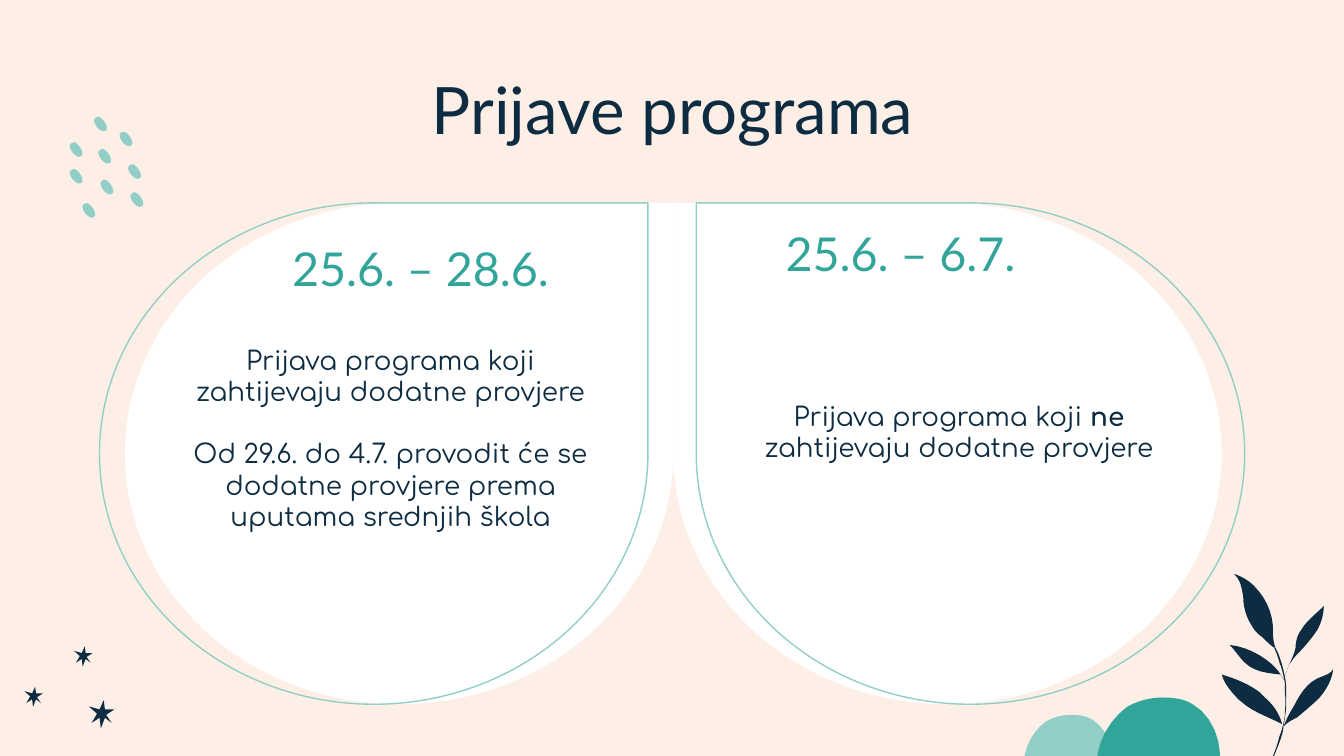
from pptx import Presentation
from pptx.dml.color import RGBColor
from pptx.enum.shapes import MSO_SHAPE
from pptx.enum.text import MSO_ANCHOR, PP_ALIGN
from pptx.util import Pt

COLORS = {"cream": "FDEEE6", "navy": "0D2C42", "teal": "32A59B",
          "mint": "90CEC7", "white": "FFFFFF"}

# Outlines in percent of their box: (x, y) is a line, six numbers are a Bézier curve.
DOT = [(33, 0), (12, 2, 0, 12, 0, 30), (8, 60, 33, 88, 60, 98),
       (80, 105, 100, 95, 98, 75), (95, 50, 70, 18, 48, 5), (43, 1, 38, 0, 33, 0)]
STAR = [(42, 33), (58, 0), (63, 33), (100, 33), (68, 52), (89, 81),
        (63, 62), (47, 100), (42, 62), (11, 81), (32, 48), (0, 22)]
DOME = [(52, 0), (44, 0, 33, 4, 24, 14), (10, 34, 0, 66, 0, 100), (97, 100),
        (100, 66, 91, 26, 76, 10), (69, 2, 61, 0, 52, 0)]
STEM = [(39, 55), (40, 57, 42, 62, 43, 66), (45, 71, 46, 76, 47, 81), (47, 89),
        (48, 95, 47, 100, 47, 106), (46, 111, 45, 116, 43, 121),
        (41, 129, 38, 137, 34, 144), (31, 149, 28, 154, 24, 159),
        (22, 163, 18, 168, 14, 173), (18, 169, 22, 164, 25, 160),
        (28, 156, 32, 149, 34, 145), (38, 139, 40, 133, 42, 128),
        (44, 123, 46, 117, 46, 113), (47, 108, 48, 102, 48, 97),
        (48, 93, 48, 89, 48, 85), (48, 81, 47, 76, 46, 72),
        (45, 67, 43, 62, 42, 59), (40, 55)]
LEAVES = [
    [(83, 71), (81, 75, 75, 76, 71, 78), (63, 82, 58, 90, 54, 98),
     (51, 103, 48, 108, 46, 114), (48, 111, 52, 109, 56, 107),
     (62, 102, 68, 97, 73, 92), (78, 86, 82, 79, 83, 71)],
    [(32, 92), (28, 88), (20, 82, 10, 78, 0, 75), (2, 82, 7, 88, 13, 94),
     (18, 98), (26, 104, 36, 107, 45, 112), (43, 104, 38, 97, 32, 92)],
    [(24, 9), (20, 5, 15, 2, 9, 0), (10, 1), (14, 5, 15, 11, 16, 17),
     (16, 24, 18, 32, 22, 38), (24, 42, 27, 45, 30, 47),
     (33, 50, 36, 53, 39, 55), (40, 55), (38, 50, 38, 44, 38, 38),
     (37, 27, 32, 17, 24, 9)],
    [(37, 67), (29, 60, 17, 54, 6, 53), (10, 57, 13, 62, 17, 66),
     (24, 73, 34, 74, 44, 75), (46, 79), (44, 74, 41, 71, 37, 67)],
    [(76, 24), (70, 30, 63, 35, 59, 42), (56, 46, 55, 51, 55, 55),
     (54, 59, 53, 62, 50, 68), (46, 79), (50, 68), (52, 65, 54, 62, 57, 59),
     (62, 54, 67, 48, 71, 42), (74, 37, 76, 30, 76, 24)],
]


def rgb(name):
    return RGBColor.from_string(COLORS[name])


def flatten(outline, steps=6):
    """Turn the curves of an outline into short straight pieces."""
    points = [outline[0]]
    for part in outline[1:]:
        if len(part) == 2:
            points.append(part)
            continue
        x0, y0 = points[-1]
        x1, y1, x2, y2, x3, y3 = part
        for i in range(1, steps + 1):
            t = i / steps
            a, b, c, d = (1 - t) ** 3, 3 * t * (1 - t) ** 2, 3 * t * t * (1 - t), t ** 3
            points.append((a * x0 + b * x1 + c * x2 + d * x3,
                           a * y0 + b * y1 + c * y2 + d * y3))
    return points


def add_outline(s, outline, box, color):
    x, y, w, h = box
    points = [(Pt(x + px * w / 100), Pt(y + py * h / 100)) for px, py in flatten(outline)]
    builder = s.shapes.build_freeform(*points[0], scale=1.0)
    builder.add_line_segments(points[1:], close=True)
    sp = builder.convert_to_shape()
    sp.shadow.inherit = False
    sp.fill.solid()
    sp.fill.fore_color.rgb = rgb(color)
    sp.line.fill.background()


def add_text(s, box, paragraphs, font, size, color, left=7.2, right=7.2, bottom=7.2, gap=0):
    """Each paragraph is a list of (text, bold) runs."""
    tf = s.shapes.add_textbox(*map(Pt, box)).text_frame
    tf.word_wrap = True
    tf.vertical_anchor = MSO_ANCHOR.MIDDLE
    tf.margin_left, tf.margin_right = Pt(left), Pt(right)
    tf.margin_top, tf.margin_bottom = Pt(7.2), Pt(bottom)
    for i, runs in enumerate(paragraphs):
        p = tf.paragraphs[0] if i == 0 else tf.add_paragraph()
        p.alignment = PP_ALIGN.CENTER
        p.space_before = Pt(gap if i else 0)
        for text, bold in runs:
            r = p.add_run()
            r.text = text
            r.font.name, r.font.size, r.font.bold = font, Pt(size), bold
            r.font.color.rgb = rgb(color)


def add_teardrop(s, box, flip):
    sp = s.shapes.add_shape(MSO_SHAPE.TEAR, *map(Pt, box))
    sp.shadow.inherit = False
    if flip:
        sp.element.spPr.xfrm.set("flipH", "1")
    return sp


def add_panel(s, box, shift, flip, date, date_box, date_right, body, body_box, **body_margins):
    """White teardrop with a shifted outline; the text boxes are relative to it."""
    x, y, w, h = box
    sp = add_teardrop(s, box, flip)
    sp.fill.solid()
    sp.fill.fore_color.rgb = rgb("white")
    sp.line.fill.background()
    sp = add_teardrop(s, (x + shift, y, w, h), flip)
    sp.fill.background()
    sp.line.color.rgb = rgb("mint")
    sp.line.width = Pt(0.75)

    def place(part):
        return x + part[0], y + part[1], part[2], part[3]

    add_text(s, place(body_box), body, "Comfortaa", 14, "navy", **body_margins)
    add_text(s, place(date_box), [[(date, False)]], "Lato", 25, "teal", right=date_right)


def add_dots(s, x, y):
    for dx, dy in [(0, 28), (0, 13.7), (15.3, 17.3), (16.5, 33.8), (13, 0),
                   (26.7, 8), (31.3, 25.5), (32.5, 40.5), (6.8, 46.3)]:
        add_outline(s, DOT, (x + dx, y + dy, 7, 7.7), "mint")


def add_stars(s, x, y):
    for dx, dy, w, h in [(34.6, 28.8, 13.7, 15.1), (0, 21.6, 10, 10.8), (26.6, 0, 10, 10.8)]:
        add_outline(s, STAR, (x + dx, y + dy, w, h), "navy")


def add_plant(s, x, y):
    for outline in [STEM, *LEAVES]:
        add_outline(s, outline, (x, y, 72, 72), "navy")


def main():
    prs = Presentation()
    prs.slide_width, prs.slide_height = Pt(720), Pt(405)
    s = prs.slides.add_slide(prs.slide_layouts[6])
    s.background.fill.solid()
    s.background.fill.fore_color.rgb = rgb("cream")

    add_dots(s, 37.4, 62.6)
    add_stars(s, 13, 346.3)
    add_outline(s, DOME, (548.6, 383, 48.2, 26), "mint")
    add_outline(s, DOME, (587.5, 373.7, 67.7, 36), "teal")
    add_plant(s, 654.5, 307.4)

    w, h, middle, top = 293.8, 268.6, 360.7, 108.7
    add_panel(s, (middle - w, top, w, h), -13.6, False,
              "25.6. – 28.6.", (42.5, 16.6, 231.8, 36), 7.2,
              [[("Prijava programa koji zahtijevaju dodatne provjere", False)],
               [("Od 29.6. do 4.7. provodit će se dodatne provjere prema "
                 "uputama srednjih škola", False)]],
              (-1.4, 80.6, 265, 107.3), left=29.5, bottom=23.8, gap=16.6)
    add_panel(s, (middle, top, w, h), 12.3, True,
              "25.6. – 6.7.", (12.3, 8.6, 231.8, 36), 20,
              [[("Prijava programa koji ", False), ("ne", True),
                (" zahtijevaju dodatne provjere", False)]],
              (21.6, 54, 262.8, 170), bottom=40.4)
    add_text(s, (56.9, 35.3, 607, 45.4), [[("Prijave programa", False)]], "Lato", 35, "navy")
    prs.save("out.pptx")


if __name__ == "__main__":
    main()
